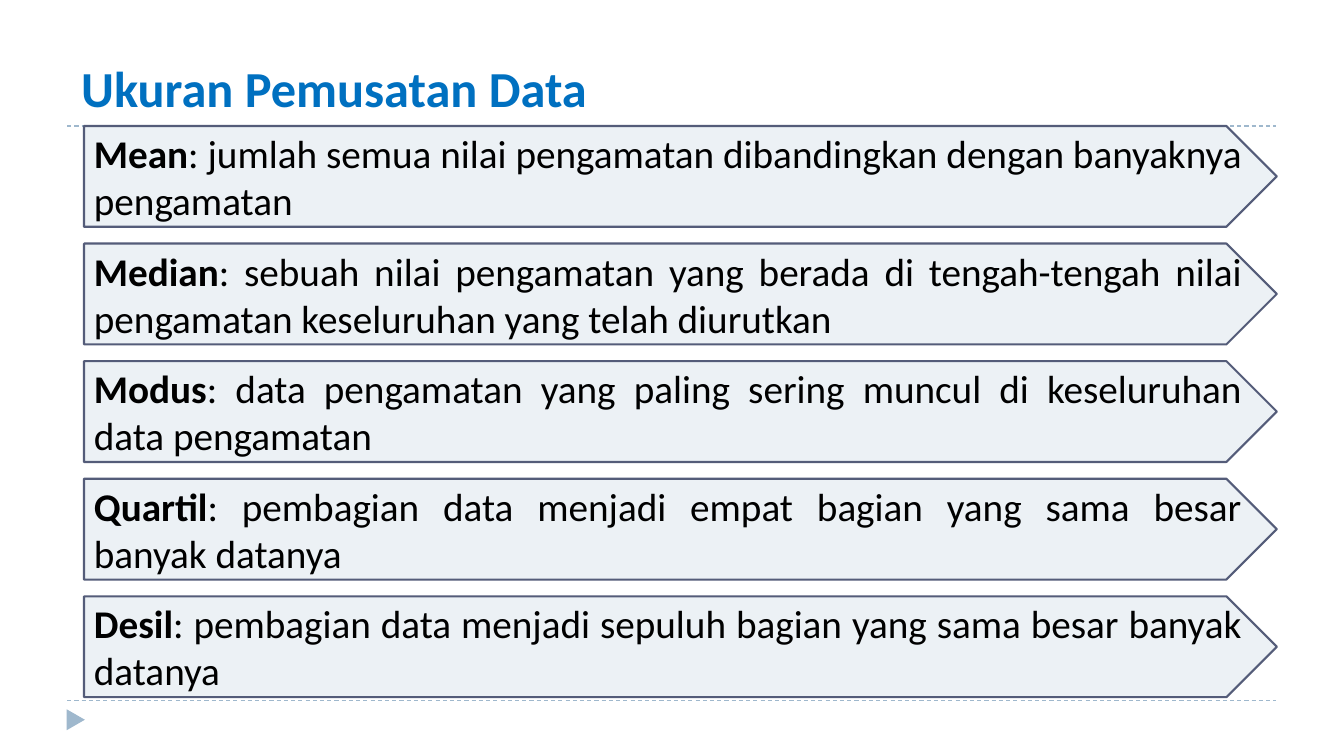
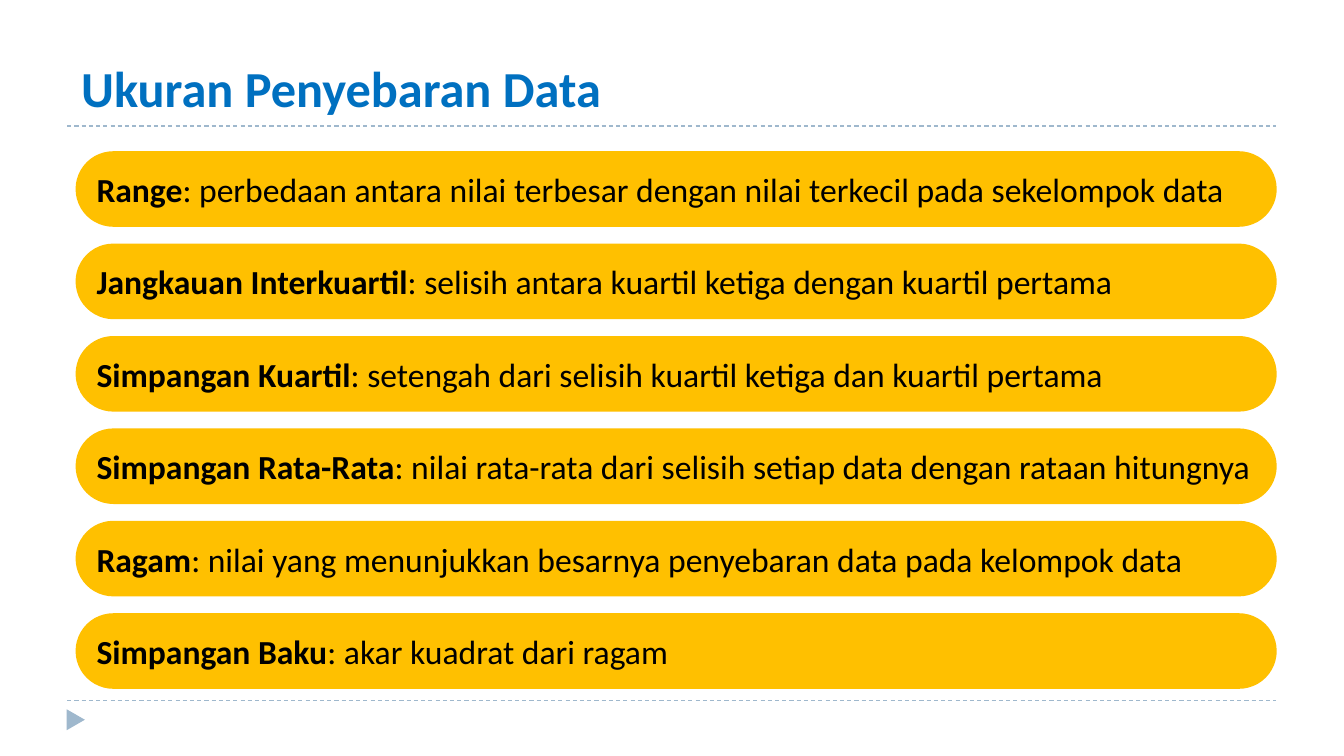
"""Build two slides on measures of central tendency and of dispersion."""
from lxml import etree
from pptx import Presentation
from pptx.dml.color import RGBColor
from pptx.enum.dml import MSO_LINE
from pptx.enum.shapes import MSO_CONNECTOR, MSO_SHAPE
from pptx.enum.text import MSO_ANCHOR, MSO_AUTO_SIZE, PP_ALIGN
from pptx.oxml.ns import qn
from pptx.util import Pt

STRAIGHT = MSO_CONNECTOR.STRAIGHT
DASH = MSO_LINE.DASH
TRIANGLE, ARROW, PILL = MSO_SHAPE.ISOSCELES_TRIANGLE, MSO_SHAPE.PENTAGON, MSO_SHAPE.ROUNDED_RECTANGLE
MIDDLE, BOTTOM = MSO_ANCHOR.MIDDLE, MSO_ANCHOR.BOTTOM
LEFT, JUSTIFY = PP_ALIGN.LEFT, PP_ALIGN.JUSTIFY

FONT = "Calibri"
BLUE, MIST, BLACK = "0070C0", "9FB8CD", "000000"
RULE_LEFT, RULE_RIGHT = 48, 911.5
RULES_Y = (500.4, 90)

SLIDES = [
    {
        "title": "Ukuran Pemusatan Data",
        "shape": ARROW, "box": (60, 90, 852, 72), "step": 84,
        "fill": "ECF1F5", "line": "545C79", "size": 28, "align": JUSTIFY,
        "items": [
            ("Mean", "jumlah semua nilai pengamatan dibandingkan dengan banyaknya pengamatan"),
            ("Median", "sebuah nilai pengamatan yang berada di tengah-tengah nilai "
                       "pengamatan keseluruhan yang telah diurutkan"),
            ("Modus", "data pengamatan yang paling sering muncul di keseluruhan data pengamatan"),
            ("Quartil", "pembagian data menjadi empat bagian yang sama besar banyak datanya"),
            ("Desil", "pembagian data menjadi sepuluh bagian yang sama besar banyak datanya"),
        ],
    },
    {
        "title": "Ukuran Penyebaran Data",
        "shape": PILL, "box": (54, 108, 858, 54), "step": 66,
        "fill": "FFC000", "line": None, "size": 24, "align": LEFT,
        "items": [
            ("Range", "perbedaan antara nilai terbesar dengan nilai terkecil pada sekelompok data"),
            ("Jangkauan Interkuartil", "selisih antara kuartil ketiga dengan kuartil pertama"),
            ("Simpangan Kuartil", "setengah dari selisih kuartil ketiga dan kuartil pertama"),
            ("Simpangan Rata-Rata", "nilai rata-rata dari selisih setiap data dengan rataan hitungnya"),
            ("Ragam", "nilai yang menunjukkan besarnya penyebaran data pada kelompok data"),
            ("Simpangan Baku", "akar kuadrat dari ragam"),
        ],
    },
]


def rgb(value):
    """Turn a hex string into a colour."""
    return RGBColor.from_string(value)


def write(p, text, size=24, color=BLACK, bold=False, align=LEFT):
    """Add a formatted run to a paragraph."""
    p.alignment = align
    r = p.add_run()
    r.text = text
    r.font.name, r.font.size, r.font.bold = FONT, Pt(size), bold
    r.font.color.rgb = rgb(color)


def add_box(s, kind, box, fill, line=None):
    """Add a filled preset shape without shadow."""
    sp = s.shapes.add_shape(kind, *map(Pt, box))
    sp.shadow.inherit = False
    sp.fill.solid()
    sp.fill.fore_color.rgb = rgb(fill)
    if line:
        sp.line.color.rgb = rgb(line)
        sp.line.width = Pt(1.5)
    else:
        sp.line.fill.background()
    return sp


def add_rule(s, y):
    """Add a dashed horizontal line."""
    rule = s.shapes.add_connector(STRAIGHT, Pt(RULE_LEFT), Pt(y), Pt(RULE_RIGHT), Pt(y))
    rule.line.color.rgb = rgb(MIST)
    rule.line.width = Pt(0.75)
    rule.line.dash_style = DASH
    etree.SubElement(rule.element.spPr, qn("a:effectLst"))
    return rule


def style_layout(layout, s):
    """Give the layout its title box, rules and corner marker."""
    title = next(iter(layout.placeholders))
    title.left, title.top, title.width, title.height = map(Pt, (49, 10.8, 864, 77.8))
    tf = title.text_frame
    tf.auto_size = MSO_AUTO_SIZE.NONE
    tf.vertical_anchor = BOTTOM
    tf.margin_left = tf.margin_right = Pt(9)
    tf.margin_top = tf.margin_bottom = Pt(4.5)

    marker = add_box(s, TRIANGLE, (46.6, 507.6, 15, 13), MIST)
    marker.rotation = 90
    decor = [add_rule(s, y) for y in RULES_Y] + [marker]
    for number, sp in enumerate(decor, 20):
        sp.element.xpath(".//p:cNvPr")[0].set("id", str(number))
        layout.shapes.element.append(sp.element)


def add_definitions(s, spec):
    """Stack one shape per term at equal steps."""
    left, top, width, height = spec["box"]
    for i, (term, meaning) in enumerate(spec["items"]):
        box = (left, top + i * spec["step"], width, height)
        sp = add_box(s, spec["shape"], box, spec["fill"], spec["line"])
        if spec["shape"] == PILL:
            sp.adjustments[0] = 0.5
        tf = sp.text_frame
        tf.word_wrap = True
        tf.vertical_anchor = MIDDLE
        p = tf.paragraphs[0]
        write(p, term, size=spec["size"], bold=True, align=spec["align"])
        write(p, f": {meaning}", size=spec["size"], align=spec["align"])


def main():
    """Build and save the presentation."""
    prs = Presentation()
    prs.slide_width, prs.slide_height = Pt(960), Pt(540)
    layout = prs.slide_layouts[5]
    for i, spec in enumerate(SLIDES):
        s = prs.slides.add_slide(layout)
        if i == 0:
            style_layout(layout, s)
        p = s.shapes.title.text_frame.paragraphs[0]
        write(p, spec["title"], size=36, color=BLUE, bold=True)
        add_definitions(s, spec)
    prs.save("out.pptx")


if __name__ == "__main__":
    main()
